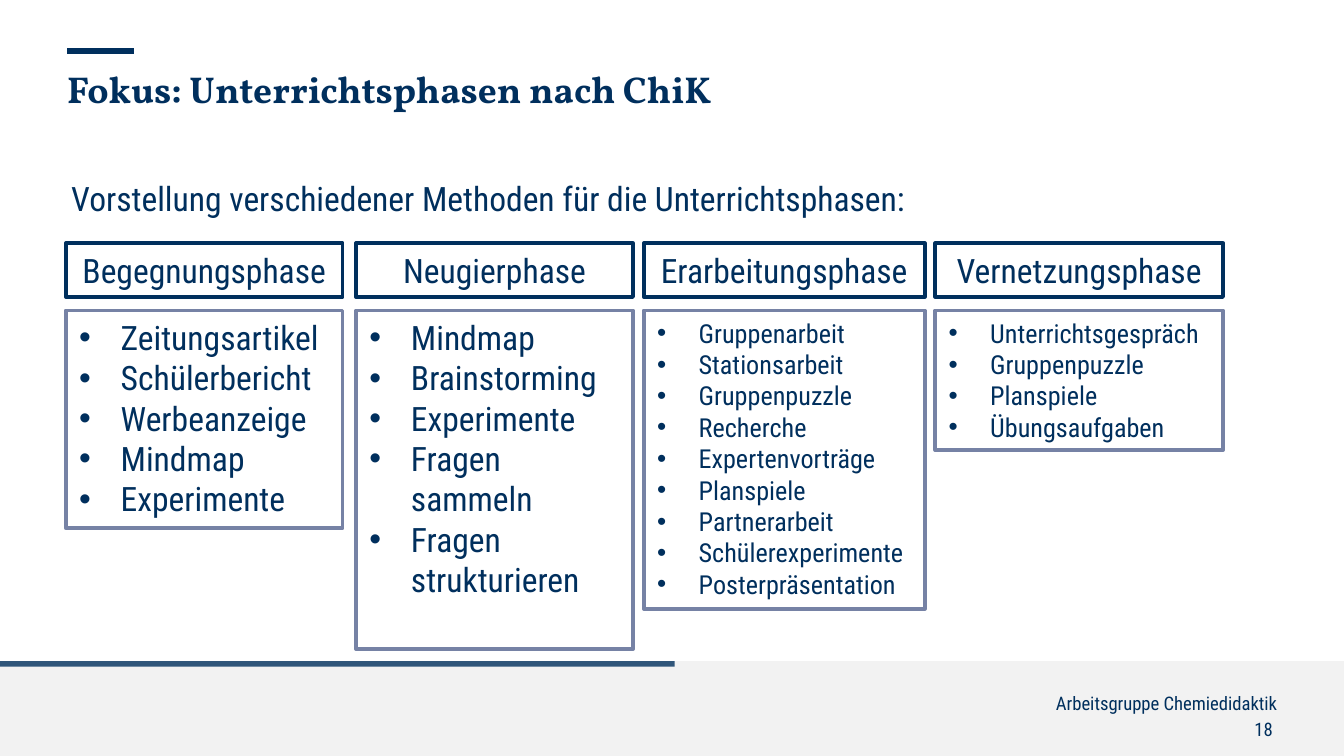
import pptx
import pptx.util
import pptx.dml.color
import pptx.enum.shapes
import pptx.enum.text
import pptx.oxml
import pptx.oxml.ns
from pptx.util import Inches

# Content
TITLE = "Fokus: Unterrichtsphasen nach ChiK"
INTRO = "Vorstellung verschiedener Methoden für die Unterrichtsphasen:"
FOOTER = "Arbeitsgruppe Chemiedidaktik"
PAGE = "18"
# Phase name, left, width, list height, list text size, methods
PHASES = [
    ("Begegnungsphase", 0.49, 2.06, 1.62, 18,
     ["Zeitungsartikel", "Schülerbericht", "Werbeanzeige", "Mindmap", "Experimente"]),
    ("Neugierphase", 2.65, 2.06, 2.52, 18,
     ["Mindmap", "Brainstorming", "Experimente", "Fragen sammeln",
      "Fragen strukturieren"]),
    ("Erarbeitungsphase", 4.79, 2.09, 2.22, 14,
     ["Gruppenarbeit", "Stationsarbeit", "Gruppenpuzzle", "Recherche",
      "Expertenvorträge", "Planspiele", "Partnerarbeit", "Schülerexperimente",
      "Posterpräsentation"]),
    ("Vernetzungsphase", 6.96, 2.14, 1.04, 14,
     ["Unterrichtsgespräch", "Gruppenpuzzle", "Planspiele", "Übungsaufgaben"]),
]
NAVY, LAVENDER, WHITE, GREY = "002F5D", "7682A5", "FFFFFF", "F2F2F2"
BODY_FONT, TITLE_FONT = "Roboto Condensed", "Vollkorn"
ALIGN = pptx.enum.text.PP_ALIGN
HEADER_TOP, HEADER_HEIGHT, LIST_TOP = 1.81, 0.4, 2.31


def paint(color_format, color):
    color_format.rgb = pptx.dml.color.RGBColor.from_string(color)


def add_element(parent, tag, **attributes):
    element = parent.makeelement(pptx.oxml.ns.qn(tag), attributes)
    parent.append(element)
    return element


def place(shape, left, top, width, height):
    shape.left, shape.top = Inches(left), Inches(top)
    shape.width, shape.height = Inches(width), Inches(height)


def write(shape, text, size=18, font=BODY_FONT, bold=False, align=ALIGN.LEFT,
          bullets=False, inset=(0.1, 0.05)):
    """Fill a shape with one paragraph per line of text."""
    frame = shape.text_frame
    frame.word_wrap = True
    frame.auto_size = pptx.enum.text.MSO_AUTO_SIZE.NONE
    frame.vertical_anchor = pptx.enum.text.MSO_ANCHOR.TOP
    frame.margin_left = frame.margin_right = Inches(inset[0])
    frame.margin_top = frame.margin_bottom = Inches(inset[1])
    frame.text = text
    for paragraph in frame.paragraphs:
        paragraph.alignment = align
        paragraph.space_before = pptx.util.Pt(0)
        properties = paragraph._p.get_or_add_pPr()
        indent = Inches(0.31) if bullets else 0
        properties.set("marL", str(indent))
        properties.set("indent", str(-indent))
        if bullets:
            add_element(properties, "a:buFont", typeface="Arial")
            add_element(properties, "a:buChar", char="•")
        else:
            add_element(properties, "a:buNone")
        for run in paragraph.runs:
            run.font.name, run.font.bold = font, bold
            run.font.size = pptx.util.Pt(size)
            paint(run.font.color, NAVY)


def add_box(slide, left, top, width, height, fill=WHITE, line=None):
    shape = slide.shapes.add_shape(
        pptx.enum.shapes.MSO_SHAPE.RECTANGLE,
        Inches(left), Inches(top), Inches(width), Inches(height))
    shape.shadow.inherit = False
    shape.fill.solid()
    paint(shape.fill.fore_color, fill)
    if line:
        paint(shape.line.color, line)
        shape.line.width = pptx.util.Pt(2)
    else:
        shape.line.fill.background()
    return shape


def add_label(slide, text, left, top, width, height, **text_format):
    label = slide.shapes.add_textbox(
        Inches(left), Inches(top), Inches(width), Inches(height))
    write(label, text, **text_format)


def main():
    # Widescreen slide, 16:9
    presentation = pptx.Presentation()
    presentation.slide_width = Inches(10)
    presentation.slide_height = Inches(10) * 9 // 16
    slide = presentation.slides.add_slide(presentation.slide_layouts[1])

    # Footer band with a translucent bar
    add_box(slide, 0, 4.92, 10, 0.71, fill=GREY)
    bar = add_box(slide, 0, 4.92, 5.02, 0.04, fill=NAVY)
    bar_color = bar._element.spPr.find(".//" + pptx.oxml.ns.qn("a:srgbClr"))
    add_element(bar_color, "a:alpha", val="80000")
    add_label(slide, FOOTER, 3.38, 5.1, 6.22, 0.16, size=10, align=ALIGN.RIGHT)
    add_label(slide, PAGE, 3.85, 5.34, 5.62, 0.17, size=10, align=ALIGN.RIGHT,
              inset=(0, 0))

    # Title with accent line, and introduction
    title, intro = slide.shapes.title, slide.placeholders[1]
    place(title, 0.5, 0.49, 6.5, 0.72)
    write(title, TITLE, size=20, font=TITLE_FONT, bold=True, inset=(0, 0))
    place(intro, 0.43, 1.27, 8.28, 0.4)
    write(intro, INTRO)
    accent = slide.shapes.add_connector(
        pptx.enum.shapes.MSO_CONNECTOR.STRAIGHT,
        Inches(0.5), Inches(0.38), Inches(1), Inches(0.38))
    paint(accent.line.color, NAVY)
    accent.line.width = pptx.util.Pt(3.5)
    add_element(accent._element.spPr, "a:effectLst")

    # One header and one list per phase
    for name, left, width, list_height, size, methods in PHASES:
        header = add_box(slide, left, HEADER_TOP, width, HEADER_HEIGHT, line=NAVY)
        write(header, name, align=ALIGN.CENTER)
        method_box = add_box(slide, left, LIST_TOP, width, list_height, line=LAVENDER)
        write(method_box, "\n".join(methods), size=size, bullets=True)

    presentation.save("out.pptx")


if __name__ == "__main__":
    main()
